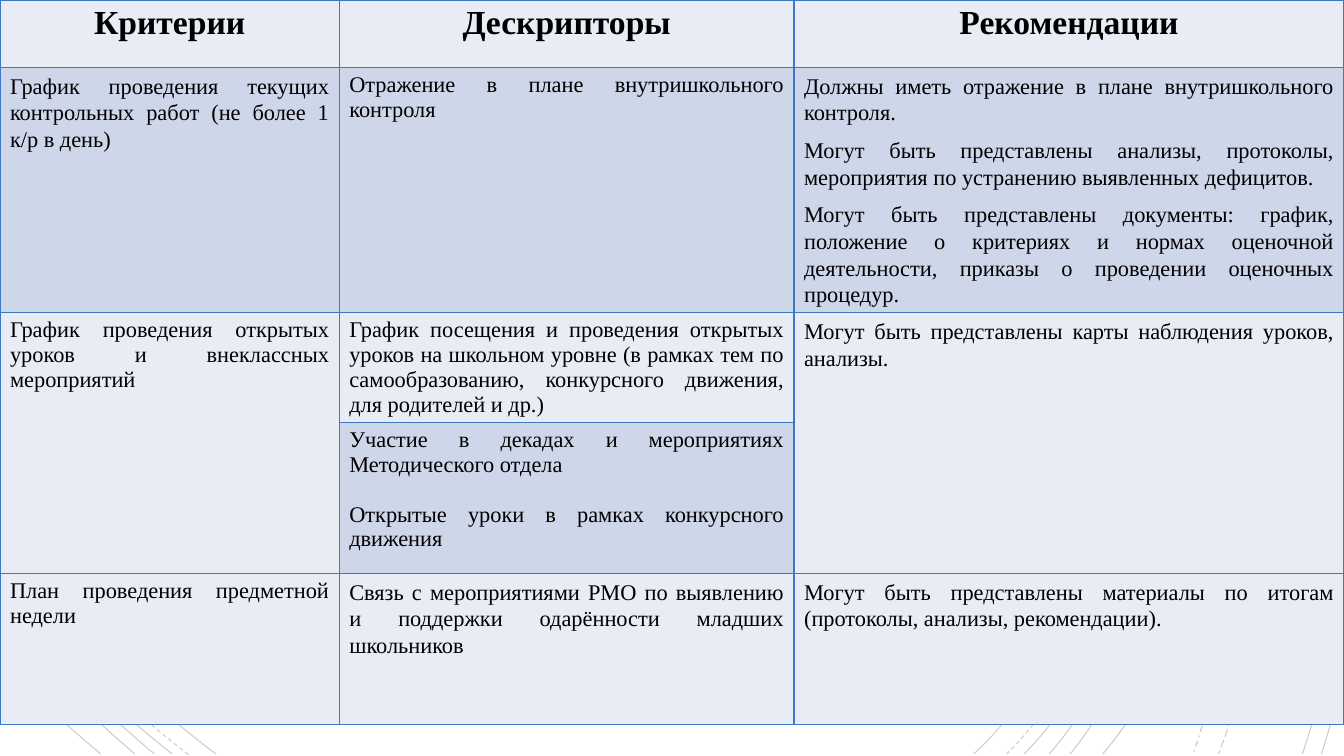
from lxml.etree import SubElement
from pptx import Presentation
from pptx.dml.color import RGBColor
from pptx.enum.dml import MSO_LINE_DASH_STYLE as Dash
from pptx.enum.text import PP_PARAGRAPH_ALIGNMENT as Align
from pptx.oxml import parse_xml
from pptx.oxml.ns import nsdecls, qn
from pptx.util import Cm, Pt

WIDTH, HEIGHT = 33.87, 19.05
LIGHT, DARK = "E8ECF5", "CED6E9"

CURVES = [
    (19.53, 0, 25.91, 2.92, 30.28, 13.72, 24.54, 19, Dash.SOLID),
    (5.44, 19, 3.51, 17.53, 1.68, 15.8, 0.1, 13.92, Dash.SOLID),
    (20.57, 0, 26.67, 3.18, 30.78, 13.64, 25.37, 19, Dash.DASH),
    (4.75, 19.02, 3.1, 17.73, 1.52, 16.26, 0.13, 14.66, Dash.DASH),
    (21.06, 0, 27.05, 3.23, 31.12, 13.64, 25.81, 19, Dash.SOLID),
    (4.34, 19, 2.84, 17.81, 1.4, 16.46, 0.1, 15.01, Dash.SOLID),
    (22.1, 0, 27.71, 3.38, 31.12, 13.74, 26.44, 19, Dash.SOLID),
    (3.89, 19, 2.57, 17.88, 1.27, 16.64, 0.1, 15.32, Dash.SOLID),
    (22.45, 0, 28.04, 3.51, 31.45, 13.54, 26.97, 19, Dash.SOLID),
    (3.4, 19, 2.24, 18.01, 1.14, 16.94, 0.1, 15.82, Dash.SOLID),
    (23.06, 0, 28.4, 3.73, 32.56, 13.44, 27.79, 19, Dash.SOLID),
    (2.54, 19, 1.73, 18.31, 0.89, 17.58, 0.1, 16.81, Dash.SOLID),
    (24.69, 0, 29.44, 4.22, 32.23, 12.93, 30.07, 19, Dash.DASH_DOT),
    (24.99, 0, 29.9, 4.29, 33.17, 12.67, 30.71, 19, Dash.LONG_DASH),
    (28.4, 0, 33.63, 4.7, 35.05, 12.45, 32.82, 19, Dash.SOLID),
    (33.87, 16.71, 33.73, 17.5, 33.55, 18.26, 33.3, 19, Dash.SOLID),
]

HEADER = dict(size=24, bold=True, align=Align.CENTER)
LOOSE = dict(spacing=1.07, after=8)

CELLS = [
    (0, 0, LIGHT, ["Критерии"], HEADER),
    (0, 1, LIGHT, ["Дескрипторы"], HEADER),
    (0, 2, LIGHT, ["Рекомендации"], HEADER),
    (1, 0, DARK, ["График проведения текущих контрольных работ (не более 1 к/р в день)"], LOOSE),
    (1, 1, DARK, ["Отражение в плане внутришкольного контроля"], {}),
    (1, 2, DARK, [
        "Должны иметь отражение в плане внутришкольного контроля.",
        "Могут быть представлены анализы, протоколы, мероприятия по устранению "
        "выявленных дефицитов.",
        "Могут быть представлены документы: график, положение о критериях и нормах "
        "оценочной деятельности, приказы о проведении оценочных процедур."], LOOSE),
    (2, 0, LIGHT, ["График проведения открытых уроков и внеклассных мероприятий"], {}),
    (2, 1, LIGHT, ["График посещения и проведения открытых уроков на школьном уровне "
                   "(в рамках тем по самообразованию, конкурсного движения, "
                   "для родителей и др.)"], {}),
    (2, 2, LIGHT, ["Могут быть представлены карты наблюдения уроков, анализы."], LOOSE),
    (3, 1, DARK, ["Участие в декадах и мероприятиях Методического отдела",
                  "Открытые уроки в рамках конкурсного движения"], dict(after=17.8)),
    (4, 0, LIGHT, ["План проведения предметной недели"], {}),
    (4, 1, LIGHT, ["Связь с мероприятиями РМО по выявлению и поддержки одарённости "
                   "младших школьников"], LOOSE),
    (4, 2, LIGHT, ["Могут быть представлены материалы по итогам "
                   "(протоколы, анализы, рекомендации)."], LOOSE),
]


def color(value):
    return RGBColor.from_string(value)


def write(para, text, font="Times New Roman", size=16, bold=False, ink="000000",
          align=Align.JUSTIFY, spacing=1.0, after=0):
    para.alignment = align
    para.line_spacing = spacing
    para.space_after = Pt(after)
    span = para.add_run()
    span.text = text
    span.font.name = font
    span.font.size = Pt(size)
    span.font.bold = bold
    span.font.color.rgb = color(ink)


class Painter:
    border = "3C78C3"
    stroke = "000000"

    def __init__(self, page):
        self.page = page

    def curve(self, *numbers, dash):
        lengths = [Cm(number) for number in numbers]
        start, *points = zip(lengths[::2], lengths[1::2])
        builder = self.page.shapes.build_freeform(*start)
        builder.add_line_segments(points, close=False)
        shape = builder.convert_to_shape()
        self.bend(shape)
        shape.shadow.inherit = False
        shape.fill.background()
        shape.line.width = Pt(1 if dash == Dash.DASH_DOT else 0.75)
        shape.line.color.rgb = color(self.stroke)
        shape.line.dash_style = dash
        tint = shape._element.spPr.find(".//" + qn("a:srgbClr"))
        SubElement(tint, qn("a:alpha"), val="20000")

    def bend(self, shape):
        segments = list(shape._element.iter(qn("a:lnTo")))
        bezier = SubElement(segments[0].getparent(), qn("a:cubicBezTo"))
        for segment in segments:
            bezier.append(segment[0])
            segment.getparent().remove(segment)

    def table(self, widths, heights, cells, merges):
        height = Cm(18.9)
        frame = self.page.shapes.add_table(
            len(heights), len(widths), Cm(0), Cm(0), Cm(WIDTH), height)
        table = frame.table
        table.first_row = table.horz_banding = False
        for column, size in zip(table.columns, widths):
            column.width = Cm(size)
        for row, size in zip(table.rows, heights):
            row.height = Cm(size)
        frame.height = height
        for first, last in merges:
            table.cell(*first).merge(table.cell(*last))
        for cell in table.iter_cells():
            self.outline(cell)
        for row, column, fill, texts, style in cells:
            self.fill_cell(table.cell(row, column), fill, texts, style)

    def outline(self, cell):
        properties = cell._tc.get_or_add_tcPr()
        for side in "LRTB":
            properties.append(parse_xml(
                f'<a:ln{side} {nsdecls("a")} w="{Pt(1)}"><a:solidFill>'
                f'<a:srgbClr val="{self.border}"/></a:solidFill></a:ln{side}>'))

    def fill_cell(self, cell, fill, texts, style):
        cell.fill.solid()
        cell.fill.fore_color.rgb = color(fill)
        box = cell.text_frame
        for index, text in enumerate(texts):
            para = box.add_paragraph() if index else box.paragraphs[0]
            write(para, text, **style)


def main():
    deck = Presentation()
    deck.slide_width, deck.slide_height = Cm(WIDTH), Cm(HEIGHT)
    painter = Painter(deck.slides.add_slide(deck.slide_layouts[6]))
    for *numbers, dash in CURVES:
        painter.curve(*numbers, dash=dash)
    painter.table(widths=[8.55, 11.46, 13.86], heights=[1.7, 3.81, 2.24, 3.81, 3.81],
                  cells=CELLS, merges=[((2, 0), (3, 0)), ((2, 2), (3, 2))])
    deck.save("out.pptx")


if __name__ == "__main__":
    main()
